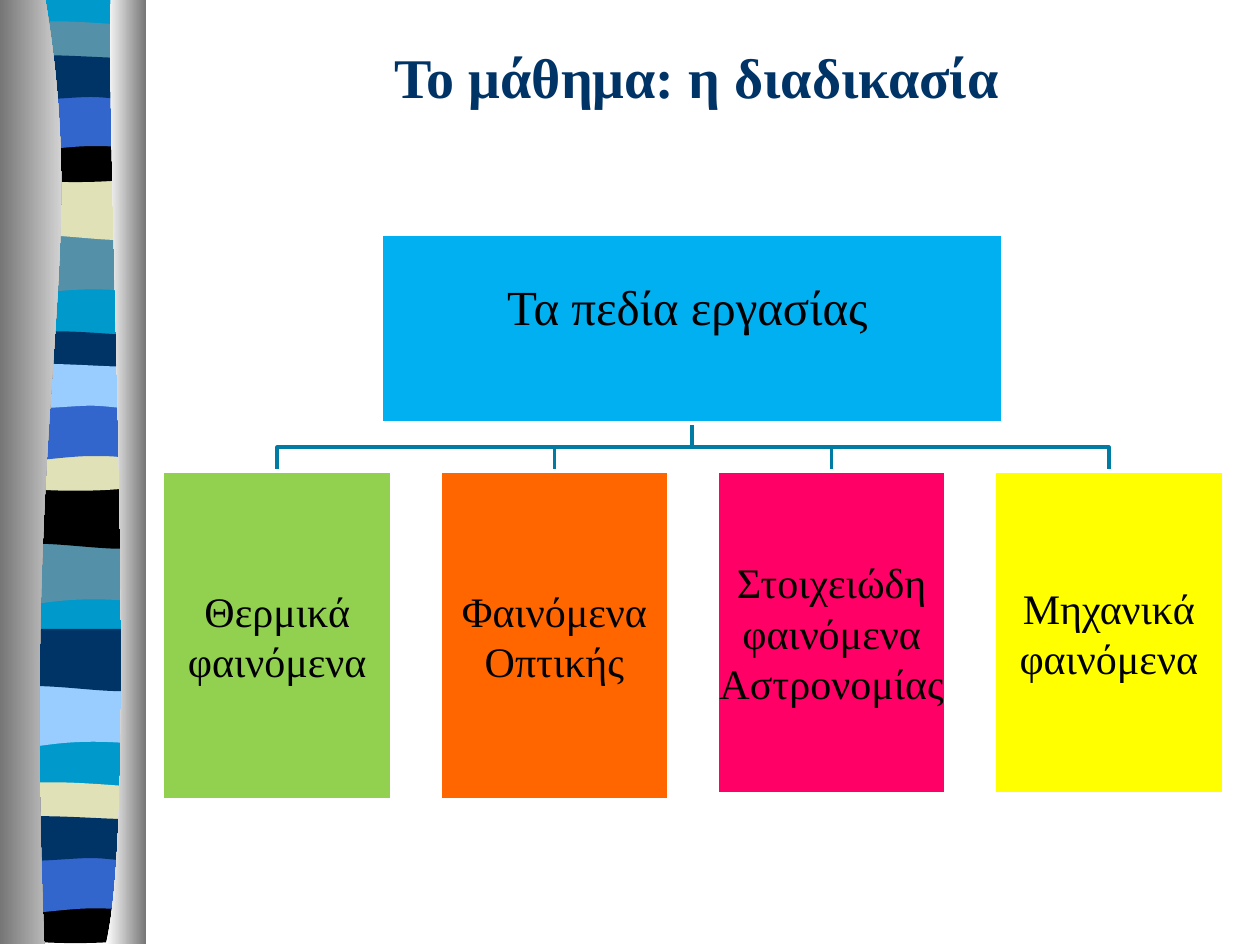
import pptx
import pptx.dml.color
import pptx.enum.shapes
import pptx.enum.text
import pptx.oxml.ns
import pptx.util

PX = 9144  # EMU; the slide is 1000 x 750 px

THEME = {
    "font": "Times New Roman",
    "title_size": 32, "root_size": 28, "leaf_size": 24, "line": 2,
    "navy": "003366", "cyan": "0099CC", "teal": "5490A8", "cream": "E1E1B7",
    "black": "000000", "blue": "3366CC", "sky": "99CCFF", "white": "FFFFFF",
    "gray": "767676", "link": "007BA3", "root": "00B0F0",
    "green": "92D050", "orange": "FF6600", "pink": "FF0066", "yellow": "FFFF00",
}


def color(name):
    return pptx.dml.color.RGBColor.from_string(THEME[name])


def add_outline(shapes, segments, top=0, close=True):
    """Draw (x, y) lines and (x1, y1, x2, y2, x, y) Bezier curves, shifted down by top."""
    points = [(x * PX, (y + top) * PX) for segment in segments
              for x, y in zip(segment[::2], segment[1::2])]
    builder = shapes.build_freeform(*points[0], scale=1.0)
    builder.add_line_segments(points[1:], close=close)
    shape = builder.convert_to_shape()
    lines = iter(list(shape.element.iter(pptx.oxml.ns.qn("a:lnTo"))))
    for segment in segments[1:]:
        first, *others = [next(lines) for _ in segment[::2]]
        if others:
            first.tag = pptx.oxml.ns.qn("a:cubicBezTo")
        for line in others:
            first.append(line[0])
            line.getparent().remove(line)
    shape.shadow.inherit = False
    shape.line.fill.background()
    return shape


deck = pptx.Presentation()
deck.slide_width, deck.slide_height = 1000 * PX, 750 * PX
page = deck.slides.add_slide(deck.slide_layouts[5])
shapes = page.shapes

# Striped ribbon: six wave outlines, each reused at several heights
WAVES = {
    "swell": [(114, 0), (114, 47), (39, 39, 24, 55, 5, 47), (5, 0)],
    "dip": [(114, 0), (114, 47), (96, 55, 39, 41, 5, 47), (5, 0)],
    "crest": [(114, 5), (114, 29), (96, 34, 24, 34, 5, 29), (5, 5),
              (12, 0, 29, 1, 47, 1), (65, 1, 100, 4, 114, 5)],
    "trough": [(114, 0), (114, 32), (96, 38, 24, 38, 5, 32), (5, 0),
               (72, 5, 91, 0, 114, 0)],
    "arch": [(114, 0), (114, 47), (97, 42, 90, 42, 72, 42),
             (54, 42, 22, 47, 5, 47), (5, 0)],
    "ripple": [(114, 5), (114, 36), (107, 41, 90, 36, 72, 36),
               (54, 36, 17, 41, 5, 36), (5, 5), (21, 0, 79, 5, 97, 5),
               (115, 5, 110, 5, 114, 5)],
}
BANDS = [
    ("swell", 185, "teal"), ("dip", 141, "cream"), ("crest", 16, "teal"),
    ("trough", 108, "black"), ("arch", 74, "blue"), ("ripple", 41, "navy"),
    ("swell", 431, "teal"), ("dip", 386, "black"), ("crest", 262, "navy"),
    ("trough", 353, "cream"), ("arch", 320, "blue"), ("ripple", 286, "sky"),
    ("swell", 544, "sky"), ("dip", 499, "navy"), ("crest", 620, "cream"),
    ("trough", 712, "black"), ("arch", 679, "blue"), ("ripple", 645, "navy"),
]
ribbon = add_outline(shapes, [(114, 0), (114, 747), (5, 747), (5, 0)])
ribbon.fill.solid()
ribbon.fill.fore_color.rgb = color("cyan")
for wave, top, fill in BANDS:
    band = add_outline(shapes, WAVES[wave], top)
    band.fill.solid()
    band.fill.fore_color.rgb = color(fill)

PILLARS = [
    ([(36, 0), (72, 217, 17, 296, 35, 749), (0, 749), (0, 0)], "gray", "white"),
    ([(88, 0), (84, 125, 111, 646, 84, 749), (116, 749), (116, 0)], "white", "gray"),
]
for outline, *stops in PILLARS:
    pillar = add_outline(shapes, outline)
    pillar.fill.gradient()
    pillar.fill.gradient_angle = 0
    for stop, name in zip(pillar.fill.gradient_stops, stops):
        stop.color.rgb = color(name)

# Title
title = shapes.title
title.left, title.top, title.width, title.height = (n * PX for n in (128, 21, 850, 79))
title.text_frame.text = "Το μάθημα: η διαδικασία"
title.text_frame.vertical_anchor = pptx.enum.text.MSO_ANCHOR.MIDDLE
para = title.text_frame.paragraphs[0]
para.alignment = pptx.enum.text.PP_ALIGN.CENTER
font = para.runs[0].font
font.name, font.size, font.bold = THEME["font"], pptx.util.Pt(THEME["title_size"]), True
font.color.rgb = color("navy")

# Hierarchy: one root above four leaves
ROOT_CENTER, ROOT_BOTTOM, LEAF_TOP = 549, 336, 374
LEAF_LEFT, LEAF_WIDTH, LEAF_PITCH = 129, 182, 220
LEAVES = [
    ("Θερμικά φαινόμενα", "green", 261),
    ("Φαινόμενα Οπτικής", "orange", 261),
    ("Στοιχειώδη φαινόμενα Αστρονομίας", "pink", 256),
    ("Μηχανικά φαινόμενα", "yellow", 256),
]
boxes = [("Τα πεδία εργασίας", "root", (303, 186, 493, 150), "root_size", (10, 38))]
middle = (ROOT_BOTTOM + LEAF_TOP) // 2
for index, (text, fill, height) in enumerate(LEAVES):
    left = LEAF_LEFT + index * LEAF_PITCH
    center = left + LEAF_WIDTH // 2
    link = add_outline(shapes, [(ROOT_CENTER, ROOT_BOTTOM), (ROOT_CENTER, middle),
                                (center, middle), (center, LEAF_TOP)], close=False)
    link.fill.background()
    link.line.color.rgb = color("link")
    link.line.width = pptx.util.Pt(THEME["line"])
    boxes.append((text, fill, (left, LEAF_TOP, LEAF_WIDTH, height), "leaf_size", (2, 2)))

for text, fill, place, size, (right_inset, bottom_inset) in boxes:
    box = shapes.add_shape(pptx.enum.shapes.MSO_SHAPE.RECTANGLE, *(n * PX for n in place))
    box.shadow.inherit = False
    box.fill.solid()
    box.fill.fore_color.rgb = color(fill)
    box.line.color.rgb = color("white")
    box.line.width = pptx.util.Pt(THEME["line"])
    frame = box.text_frame
    frame.text = text
    frame.word_wrap = True
    frame.vertical_anchor = pptx.enum.text.MSO_ANCHOR.MIDDLE
    frame.margin_left = frame.margin_top = 2 * PX
    frame.margin_right, frame.margin_bottom = right_inset * PX, bottom_inset * PX
    para = frame.paragraphs[0]
    para.alignment = pptx.enum.text.PP_ALIGN.CENTER
    font = para.runs[0].font
    font.name, font.size = THEME["font"], pptx.util.Pt(THEME[size])
    font.color.rgb = color("black")

deck.save("out.pptx")
